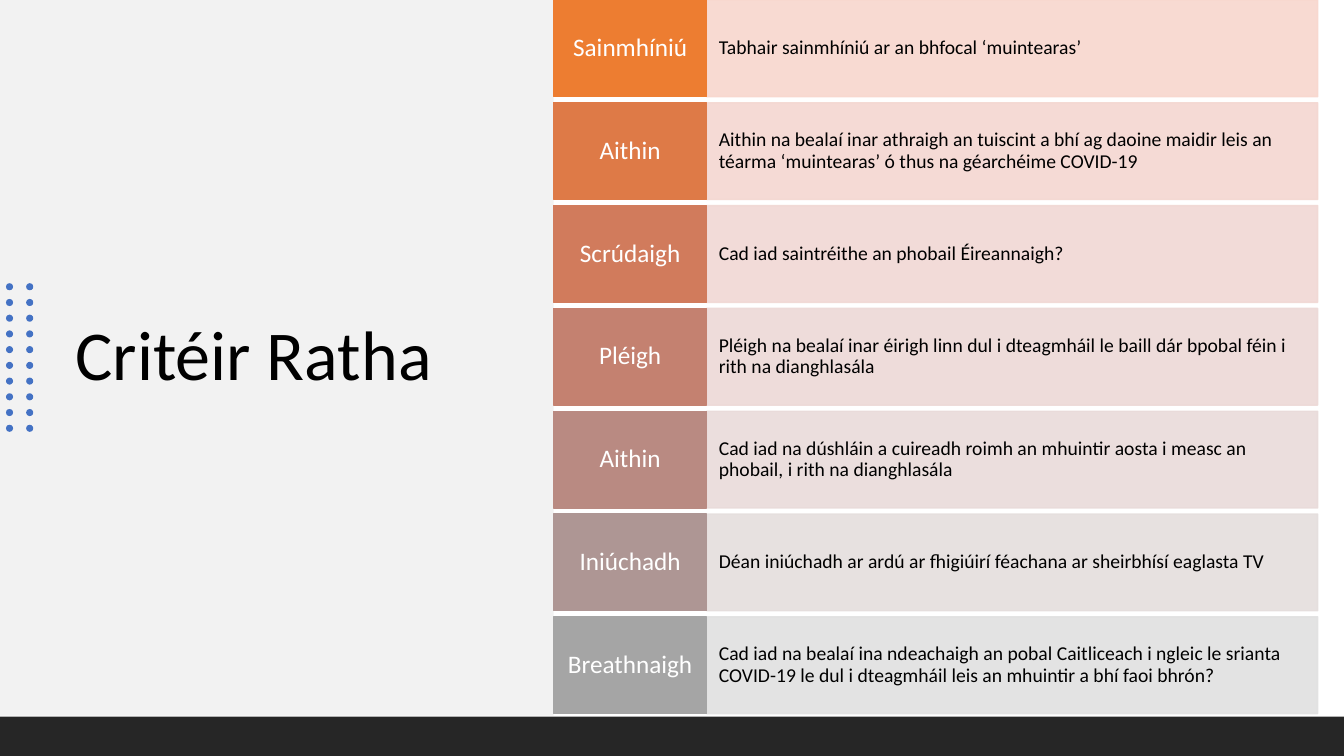
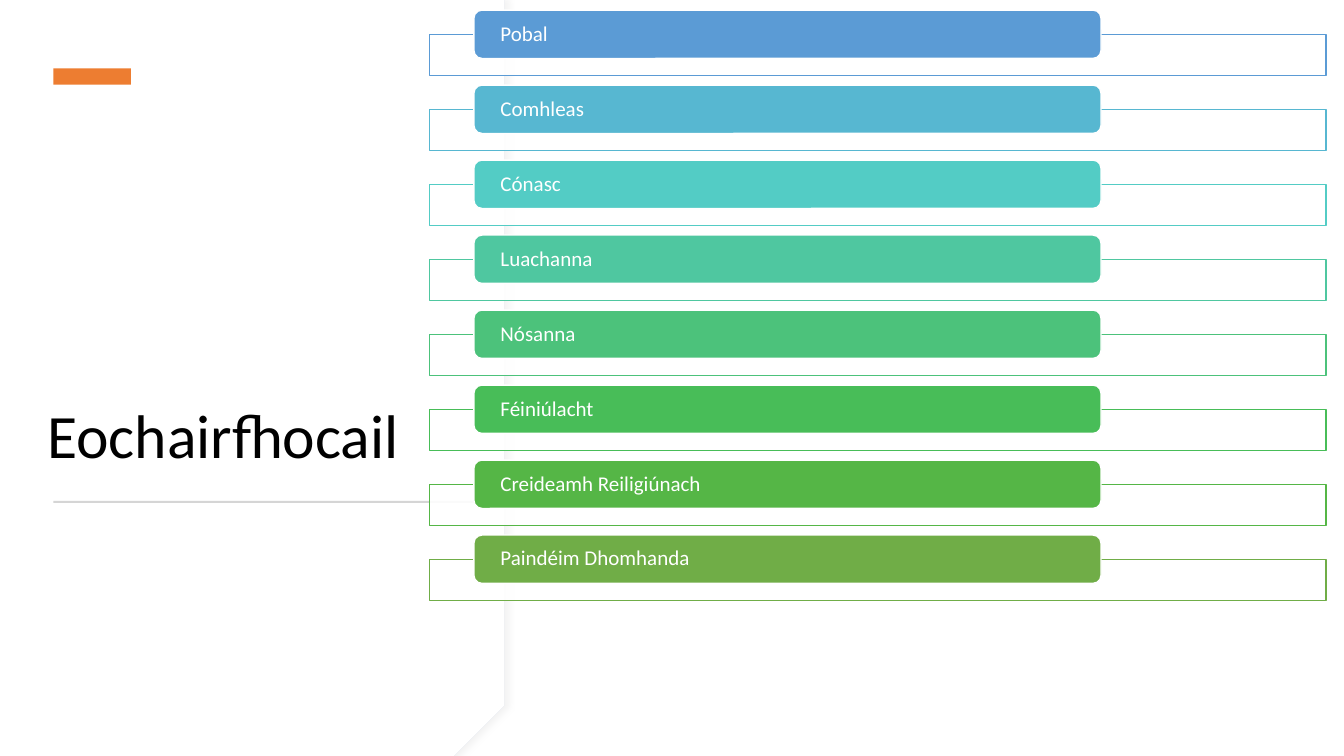
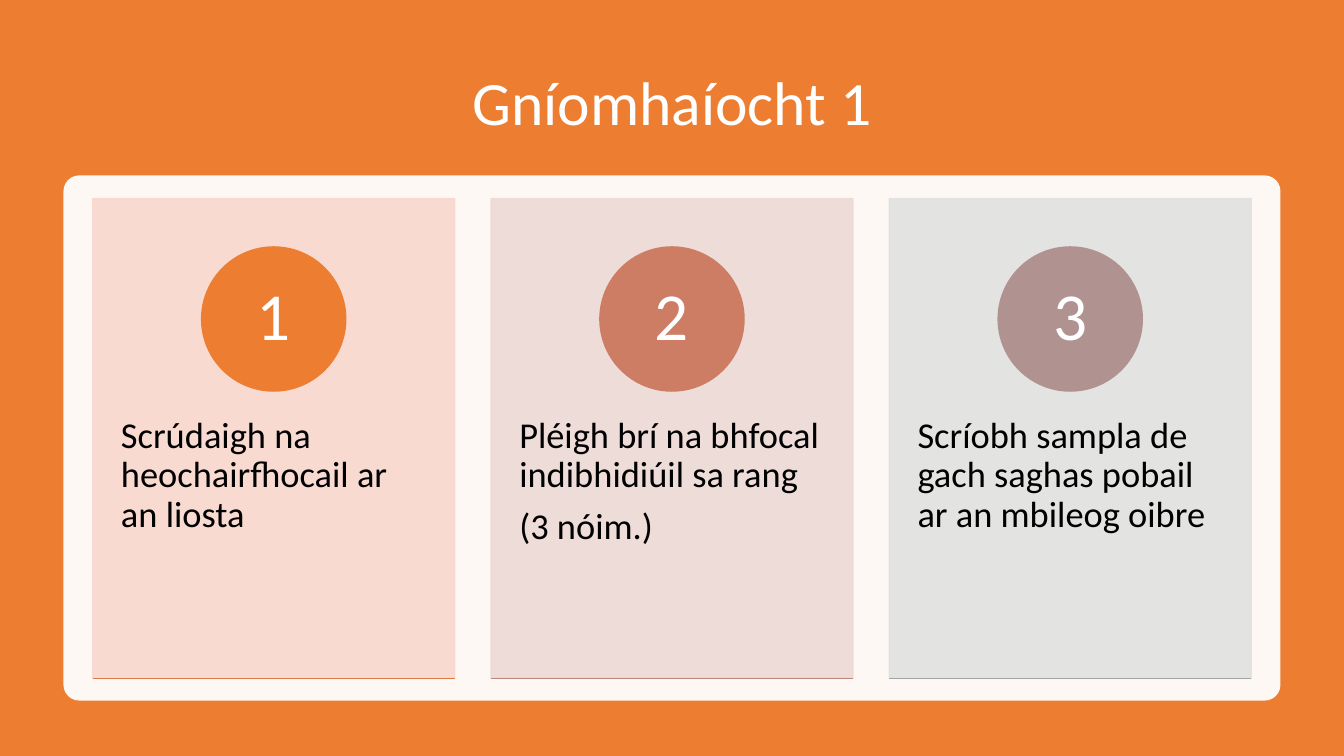
from dataclasses import dataclass

from lxml.etree import SubElement
from pptx import Presentation
from pptx.dml.color import RGBColor
from pptx.enum.shapes import MSO_CONNECTOR as CONN, MSO_SHAPE as SHAPE
from pptx.enum.text import MSO_ANCHOR as ANCHOR, PP_ALIGN as ALIGN
from pptx.oxml.ns import qn
from pptx.util import Inches, Pt


@dataclass(frozen=True)
class Theme:
    font: str = "Calibri"
    white: str = "FFFFFF"
    black: str = "000000"
    orange: str = "ED7D31"
    blue: str = "4472C4"
    panel: str = "F2F2F2"
    footer: str = "262626"
    rule: str = "D5D5D5"
    curve: str = "EBEEF2"
    shade: str = "D9D9D9"
    # Type sizes
    title_large: int = 50
    title: int = 44
    number: int = 48
    card: int = 26
    label: int = 18
    bar: int = 15
    body: int = 14


T = Theme()
W, H = 13.33, 7.5

# Label, description, label colour, description colour
CRITERIA = [
    ("Sainmhíniú", "Tabhair sainmhíniú ar an bhfocal ‘muintearas’", T.orange, "F8D7CE"),
    ("Aithin", "Aithin na bealaí inar athraigh an tuiscint a bhí ag daoine maidir leis an "
     "téarma ‘muintearas’ ó thus na géarchéime COVID-19", "DE7A47", "F4D7D1"),
    ("Scrúdaigh", "Cad iad saintréithe an phobail Éireannaigh?", "D17B5C", "F1D8D4"),
    ("Pléigh", "Pléigh na bealaí inar éirigh linn dul i dteagmháil le baill dár bpobal féin i "
     "rith na dianghlasála", "C48170", "EDD9D7"),
    ("Aithin", "Cad iad na dúshláin a cuireadh roimh an mhuintir aosta i measc an "
     "phobail, i rith na dianghlasála", "B98A82", "E9DBDA"),
    ("Iniúchadh", "Déan iniúchadh ar ardú ar fhigiúirí féachana ar sheirbhísí eaglasta TV",
     "AE9694", "E5DEDD"),
    ("Breathnaigh", "Cad iad na bealaí ina ndeachaigh an pobal Caitliceach i ngleic le srianta "
     "COVID-19 le dul i dteagmháil leis an mhuintir a bhí faoi bhrón?", "A5A5A5", "E1E1E1"),
]

KEYWORDS = [
    ("Pobal", "5B9BD5"), ("Comhleas", "57B7D1"), ("Cónasc", "53CCC5"),
    ("Luachanna", "4FC7A0"), ("Nósanna", "4CC27B"), ("Féiniúlacht", "48BD58"),
    ("Creideamh Reiligiúnach", "55B646"), ("Paindéim Dhomhanda", "70AD47"),
]

# Paragraphs, card colour, circle colour, rule colour
STEPS = [
    (["Scrúdaigh na heochairfhocail ar an liosta"], "F8D7CE", T.orange, "DC7A4B"),
    (["Pléigh brí na bhfocal indibhidiúil sa rang", "(3 nóim.)"],
     "EDD9D7", "CC7D64", "BD867B"),
    (["Scríobh sampla de gach saghas pobail ar an mbileog oibre"],
     "E1E1E1", "B09391", "A5A5A5"),
]


# Formatting helpers
def set_all(obj, values):
    for name, value in values.items():
        setattr(obj, name, value)


def paint(fill, color, alpha=100):
    fill.solid()
    fill.fore_color.rgb = RGBColor.from_string(color)
    if alpha < 100:
        clr = fill._xPr.find(qn("a:solidFill"))[0]
        SubElement(clr, qn("a:alpha"), val=str(alpha * 1000))


def style(sp, fill, line=None, alpha=100, line_alpha=100, width=1):
    sp.shadow.inherit = False
    paint(sp.fill, fill, alpha)
    if line:
        sp.line.width = Pt(width)
        paint(sp.line.fill, line, line_alpha)
    else:
        sp.line.fill.background()


def write(sp, paras, size, color=T.black, align=ALIGN.LEFT,
          anchor=ANCHOR.MIDDLE, inset=(0.1, 0.05), after=0):
    tf = sp.text_frame
    dx, dy = map(Inches, inset)
    set_all(tf, dict(word_wrap=True, vertical_anchor=anchor, margin_left=dx,
                     margin_right=dx, margin_top=dy, margin_bottom=dy))
    for i, text in enumerate(paras):
        p = tf.add_paragraph() if i else tf.paragraphs[0]
        set_all(p, dict(alignment=align, line_spacing=0.9, space_after=Pt(after)))
        r = p.add_run()
        r.text = text
        set_all(r.font, dict(name=T.font, size=Pt(size)))
        r.font.color.rgb = RGBColor.from_string(color)


# Element helpers
def add_box(s, box, fill, kind=SHAPE.RECTANGLE, **look):
    sp = s.shapes.add_shape(kind, *map(Inches, box))
    style(sp, fill, **look)
    return sp


def add_text(s, box, paras, size, **look):
    write(s.shapes.add_textbox(*map(Inches, box)), paras, size, **look)


def add_title(s, box, text, size=T.title, **look):
    add_text(s, box, [text], size, **look)


def add_rule(s, x, y, length, color):
    ln = s.shapes.add_connector(CONN.STRAIGHT, *map(Inches, (x, y, x + length, y)))
    ln.line.width = Pt(1)
    paint(ln.line.fill, color)
    SubElement(ln._element.spPr, qn("a:effectLst"))


def bezier(p0, p1, p2, p3, steps=24):
    for t in (i / steps for i in range(1, steps + 1)):
        u = 1 - t
        yield tuple(u**3 * a + 3 * u * u * t * b + 3 * u * t * t * c + t**3 * d
                    for a, b, c, d in zip(p0, p1, p2, p3))


def add_curved_panel(s, right, **look):
    mid, edge = H / 2, right - 0.85
    upper = list(bezier((edge, 0.13), (right - 0.31, 1.14), (right, 2.39), (right, mid)))
    lower = [(x, H - y) for x, y in reversed(upper[:-1])]
    points = [(edge - 0.08, 0), (edge, 0.13), *upper, *lower,
              (edge, H - 0.13), (edge - 0.08, H), (0, H)]
    fb = s.shapes.build_freeform(0, 0, scale=Inches(1))
    fb.add_line_segments(points, close=True)
    sp = fb.convert_to_shape()
    style(sp, T.white, **look)
    return sp


def add_soft_shadow(sp):
    effects = sp._element.spPr.find(qn("a:effectLst"))
    shadow = SubElement(effects, qn("a:outerShdw"), blurRad=str(Pt(4)),
                        dist=str(Pt(3)), dir="0", rotWithShape="0")
    clr = SubElement(shadow, qn("a:srgbClr"), val=T.shade)
    SubElement(clr, qn("a:alpha"), val="30000")


# Slides
def criteria_slide(s):
    split, label_w, text_w, row_h, pitch = 5.49, 1.52, 6.06, 0.96, 1.02
    add_box(s, (0, 0, split, 7.1), T.panel)
    add_title(s, (0.65, 1.32, 4.24, 4.45), "Critéir Ratha", T.title_large)
    # Dot grid
    for row in range(10):
        for x in (0.06, 0.26):
            add_box(s, (x, 2.81 + row * 0.156, 0.07, 0.07), T.blue, SHAPE.OVAL)
    add_box(s, (0, 7.11, W, 0.39), T.footer)
    # Criteria rows
    for i, (label, text, dark, light) in enumerate(CRITERIA):
        y = i * pitch
        sp = add_box(s, (split + label_w, y, text_w, row_h), light,
                     line=light, alpha=90, line_alpha=90)
        write(sp, [text], T.body, inset=(0.12, 0.24))
        sp = add_box(s, (split, y, label_w, row_h), dark, line=dark)
        write(sp, [label], T.label, T.white, ALIGN.CENTER, inset=(0.08, 0.1))


def keywords_slide(s):
    add_soft_shadow(add_curved_panel(s, 5.42, line=T.curve, width=0.75))
    add_curved_panel(s, 5.41)
    add_title(s, (0.37, 1.23, 4.55, 3.5), "Eochairfhocail", anchor=ANCHOR.BOTTOM)
    add_box(s, (0.53, 0.68, 0.77, 0.16), T.orange)
    add_box(s, (0.53, 4.97, 4.4, 0.02), T.rule)
    # Keyword bars over open frames
    for i, (word, color) in enumerate(KEYWORDS):
        y = 0.1 + i * 0.744
        add_box(s, (4.26, y + 0.24, 8.89, 0.41), T.white, line=color, alpha=90)
        sp = add_box(s, (4.7, y, 6.22, 0.48), color, SHAPE.ROUNDED_RECTANGLE, line=T.white)
        write(sp, [word], T.bar, T.white, inset=(0.24, 0))


def activity_slide(s):
    left, top, card_w, card_h, pitch, circle = 0.92, 1.97, 3.59, 4.76, 3.95, 1.43
    add_box(s, (0, 0, W, H), T.orange)
    add_title(s, (left, 0.5, 11.5, 1.1), "Gníomhaíocht 1", color=T.white, align=ALIGN.CENTER)
    sp = add_box(s, (0.63, 1.74, 12.07, 5.21), T.white, SHAPE.ROUNDED_RECTANGLE, alpha=95)
    sp.adjustments[0] = 0.03
    # Numbered cards
    for i, (paras, light, dark, rule) in enumerate(STEPS):
        x = left + i * pitch
        add_box(s, (x, top, card_w, card_h), light, line=light, alpha=90, line_alpha=90)
        add_text(s, (x, 3.78, card_w, 2.86), paras, T.card,
                 anchor=ANCHOR.TOP, inset=(0.28, 0.36), after=9)
        sp = add_box(s, (x + (card_w - circle) / 2, 2.45, circle, circle), dark,
                     SHAPE.OVAL, line=dark)
        write(sp, [str(i + 1)], T.number, T.white, ALIGN.CENTER, inset=(0.11, 0.01))
        add_rule(s, x, top + card_h, card_w, rule)


def main():
    prs = Presentation()
    set_all(prs, dict(slide_width=Inches(W), slide_height=Inches(H)))
    blank = prs.slide_layouts[6]
    for build in (criteria_slide, keywords_slide, activity_slide):
        build(prs.slides.add_slide(blank))
    prs.save("out.pptx")


if __name__ == "__main__":
    main()
